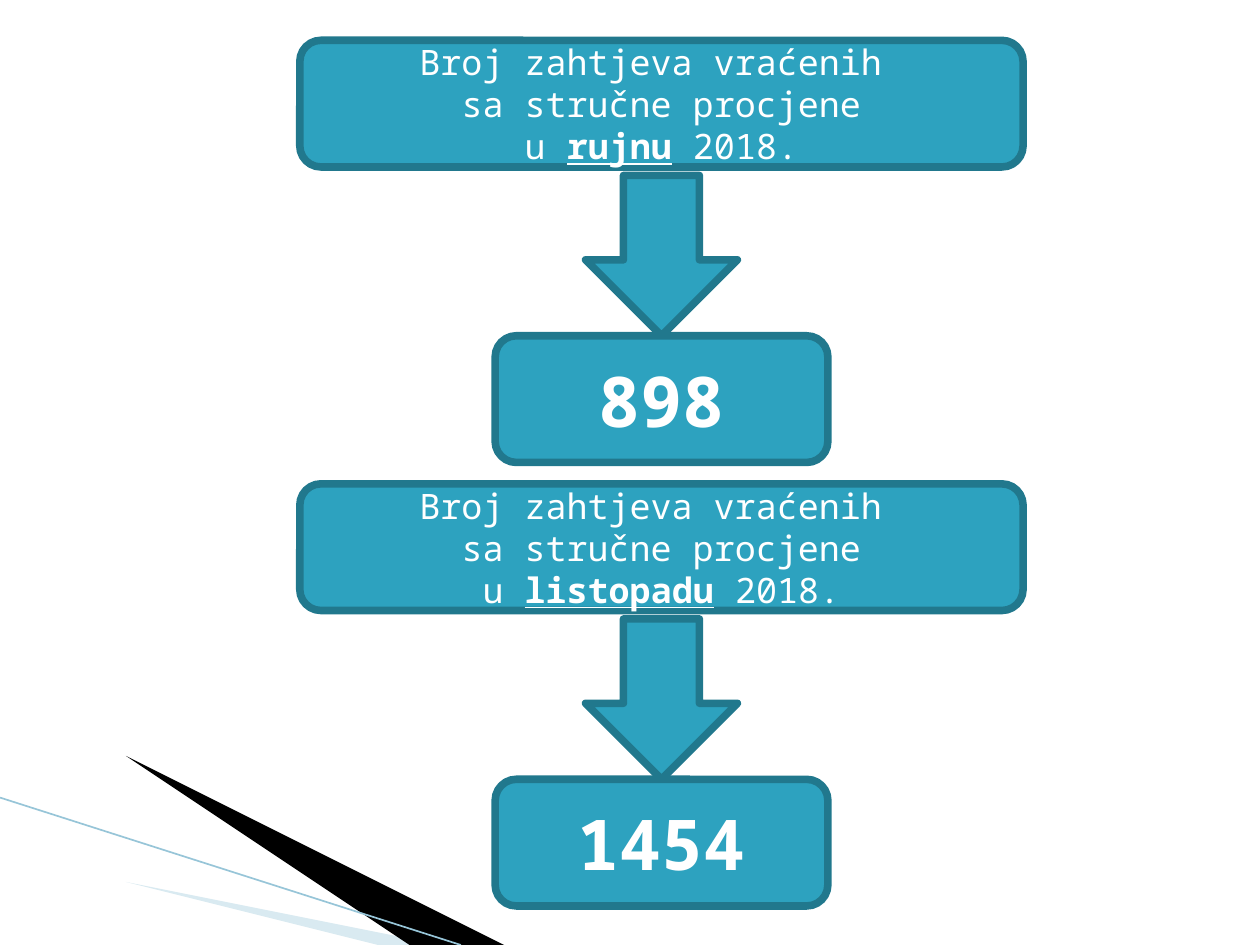
from lxml.etree import SubElement
from pptx import Presentation
from pptx.dml.color import RGBColor
from pptx.enum.shapes import MSO_CONNECTOR, MSO_SHAPE
from pptx.enum.text import MSO_ANCHOR, PP_ALIGN
from pptx.oxml.ns import qn
from pptx.util import Inches, Pt

FONT = "Noto Sans Mono"
FILL, EDGE, WHITE = "2DA2BF", "21788D", "FFFFFF"
WIDTH, HEIGHT = 10, 7.5


def color(value):
    return RGBColor.from_string(value)


def add_wedge(s, points, fill, alpha=None):
    builder = s.shapes.build_freeform(*points[0], scale=Inches(1))
    builder.add_line_segments(points[1:], close=True)
    sp = builder.convert_to_shape()
    sp.shadow.inherit = False
    sp.fill.solid()
    sp.fill.fore_color.rgb = color(fill)
    sp.line.fill.background()
    if alpha is not None:
        clr = sp.fill._xPr.find(qn("a:solidFill"))[0]
        SubElement(clr, qn("a:alpha")).set("val", str(alpha * 1000))


def add_corner(s, left, top, width, height):
    def at(x, y):
        return left + x * width, top + y * height

    add_wedge(s, [at(0.09, 0.15), at(1, 1), at(0.77, 1)], "A0CBDC", 40)
    add_wedge(s, [at(0.09, 0.14), at(0.77, 1), at(0.63, 1)], "000000")
    ends = [Inches(v) for v in (*at(0, 0), *at(0.62, 1))]
    line = s.shapes.add_connector(MSO_CONNECTOR.STRAIGHT, *ends)
    line.line.color.rgb = color("97C5D8")
    line.line.width = Pt(0.95)
    SubElement(line._element.spPr, qn("a:effectLst"))


def add_block(s, kind, left, top, width, height):
    sp = s.shapes.add_shape(kind, *map(Inches, (left, top, width, height)))
    sp.shadow.inherit = False
    sp.fill.solid()
    sp.fill.fore_color.rgb = color(FILL)
    sp.line.color.rgb = color(EDGE)
    sp.line.width = Pt(4.33)
    return sp


def write(sp, lines, size):
    tf = sp.text_frame
    tf.word_wrap = True
    tf.vertical_anchor = MSO_ANCHOR.MIDDLE
    for i, line in enumerate(lines):
        p = tf.paragraphs[0] if i == 0 else tf.add_paragraph()
        p.alignment = PP_ALIGN.CENTER
        for text, strong, underline in line:
            r = p.add_run()
            r.text = text
            r.font.name = FONT
            r.font.size = Pt(size)
            r.font.bold = strong
            r.font.underline = underline
            r.font.color.rgb = color(WHITE)


def add_month(s, month, count, left, top, width, height):
    row = height * 0.3
    middle = left + width / 2
    arrow_w, value_w = width * 0.21, width * 0.46
    title = add_block(s, MSO_SHAPE.ROUNDED_RECTANGLE, left, top, width, row)
    write(title, [
        [("Broj zahtjeva vraćenih ", False, False)],
        [("sa stručne procjene", False, False)],
        [("u ", False, False), (month, True, True), (" 2018.", False, False)],
    ], 20)
    add_block(s, MSO_SHAPE.DOWN_ARROW, middle - arrow_w / 2,
              top + height * 0.32, arrow_w, height * 0.38)
    value = add_block(s, MSO_SHAPE.ROUNDED_RECTANGLE, middle - value_w / 2,
                      top + height - row, value_w, row)
    write(value, [[(count, True, False)]], 40)


def main():
    prs = Presentation()
    prs.slide_width, prs.slide_height = Inches(WIDTH), Inches(HEIGHT)
    s = prs.slides.add_slide(prs.slide_layouts[6])
    add_corner(s, 0, 6.33, WIDTH * 0.59, HEIGHT - 6.33)
    months = [("rujnu", "898"), ("listopadu", "1454")]
    for i, (month, count) in enumerate(months):
        add_month(s, month, count, 2.38, 0.32 + i * 3.52, 5.74, 3.35)
    prs.save("out.pptx")


if __name__ == "__main__":
    main()
